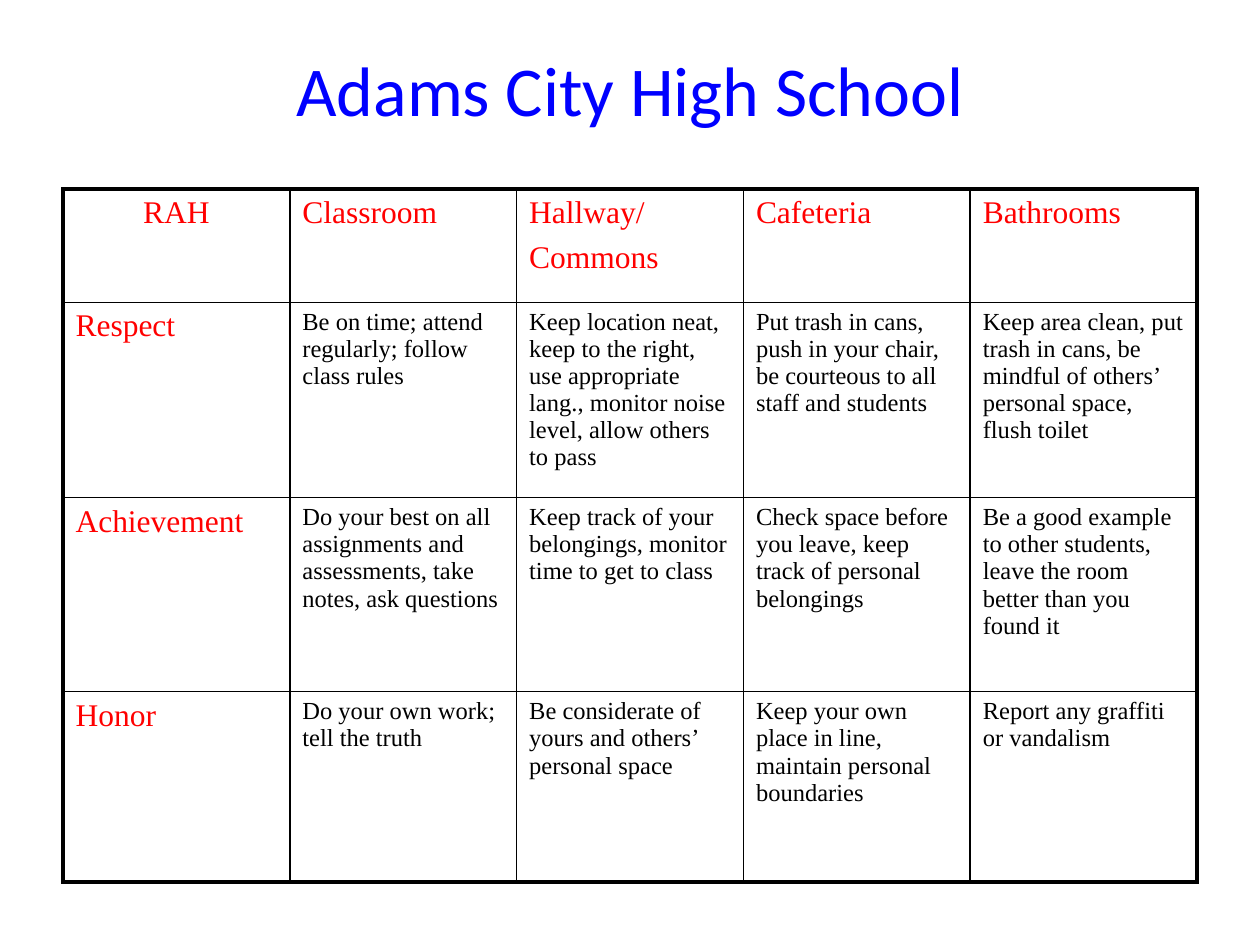
from dataclasses import dataclass

from lxml import etree
from pptx import Presentation
from pptx.dml.color import RGBColor
from pptx.enum.text import MSO_ANCHOR, PP_ALIGN
from pptx.oxml.ns import qn
from pptx.util import Inches, Pt

CENTER, LEFT = PP_ALIGN.CENTER, PP_ALIGN.LEFT
MIDDLE, TOP = MSO_ANCHOR.MIDDLE, MSO_ANCHOR.TOP
TITLE_ONLY = 5


@dataclass(frozen=True)
class Theme:
    title_font: str = "Calibri"
    table_font: str = "Times New Roman"
    title_color: str = "0000FF"
    heading_color: str = "FF0000"
    body_color: str = "000000"
    border_color: str = "000000"
    title_size: float = 40
    heading_size: float = 18
    body_size: float = 14
    paragraph_gap: float = 6
    outer_border: float = 2.25
    inner_border: float = 1


EXPECTATIONS = [
    ["RAH", "Classroom", "Hallway/\nCommons", "Cafeteria", "Bathrooms"],
    ["Respect",
     "Be on time; attend regularly; follow class rules",
     "Keep location neat, keep to the right, use appropriate lang., "
     "monitor noise level, allow others to pass",
     "Put trash in cans, push in your chair, be courteous to all staff and students",
     "Keep area clean, put trash in cans, be mindful of others’ personal space, "
     "flush toilet"],
    ["Achievement",
     "Do your best on all assignments and assessments, take notes, ask questions",
     "Keep track of your belongings, monitor time to get to class",
     "Check space before you leave, keep track of personal belongings",
     "Be a good example to other students, leave the room better than you found it"],
    ["Honor",
     "Do your own work; tell the truth",
     "Be considerate of yours and others’ personal space",
     "Keep your own place in line, maintain personal boundaries",
     "Report any graffiti or vandalism"],
]
ROW_HEIGHTS = [0.9, 1.55, 1.54, 1.51]


class SlideBuilder:
    def __init__(self, slide, theme):
        self.slide = slide
        self.theme = theme

    def format_paragraph(self, paragraph, font, size, color, align):
        paragraph.alignment = align
        paragraph.font.name = font
        paragraph.font.size = Pt(size)
        paragraph.font.color.rgb = RGBColor.from_string(color)

    def title(self, text, left, top, width, height):
        heading = self.slide.shapes.title
        heading.left, heading.top = Inches(left), Inches(top)
        heading.width, heading.height = Inches(width), Inches(height)
        heading.text_frame.text = text
        heading.text_frame.vertical_anchor = MIDDLE
        self.format_paragraph(heading.text_frame.paragraphs[0], self.theme.title_font,
                              self.theme.title_size, self.theme.title_color, CENTER)

    def border(self, cell, side, width):
        """Draw one cell edge; side is L, R, T or B, added in that order."""
        line = etree.SubElement(cell._tc.get_or_add_tcPr(), qn(f"a:ln{side}"),
                                w=str(Pt(width)))
        fill = etree.SubElement(line, qn("a:solidFill"))
        etree.SubElement(fill, qn("a:srgbClr"), val=self.theme.border_color)

    def cell(self, cell, text, is_heading, align):
        theme = self.theme
        size, color = ((theme.heading_size, theme.heading_color) if is_heading
                       else (theme.body_size, theme.body_color))
        cell.text = text
        cell.vertical_anchor = TOP
        for index, paragraph in enumerate(cell.text_frame.paragraphs):
            self.format_paragraph(paragraph, theme.table_font, size, color, align)
            if index:
                paragraph.space_before = Pt(theme.paragraph_gap)

    def table(self, rows, row_heights, left, top, width):
        """Add a grid whose first row and column are headings, with a heavy frame."""
        last_row, last_column = len(rows) - 1, len(rows[0]) - 1
        grid = self.slide.shapes.add_table(
            len(rows), len(rows[0]), Inches(left), Inches(top),
            Inches(width), Inches(sum(row_heights))).table
        grid.first_row = grid.horz_banding = False
        for row, height in zip(grid.rows, row_heights):
            row.height = Inches(height)
        for r, texts in enumerate(rows):
            for c, text in enumerate(texts):
                cell = grid.cell(r, c)
                self.cell(cell, text, r == 0 or c == 0, LEFT if r or c else CENTER)
                on_frame = {"L": c == 0, "R": c == last_column,
                            "T": r == 0, "B": r == last_row}
                for side, outer in on_frame.items():
                    self.border(cell, side, self.theme.outer_border if outer
                                else self.theme.inner_border)
                cell.fill.background()


def main():
    deck = Presentation()
    deck.slide_width, deck.slide_height = Inches(10), Inches(7.5)
    slide = deck.slides.add_slide(deck.slide_layouts[TITLE_ONLY])
    builder = SlideBuilder(slide, Theme())
    builder.title("Adams City High School", 0.75, 0.08, 8.5, 1.25)
    builder.table(EXPECTATIONS, ROW_HEIGHTS, 0.5, 1.5, 9)
    deck.save("out.pptx")


if __name__ == "__main__":
    main()
